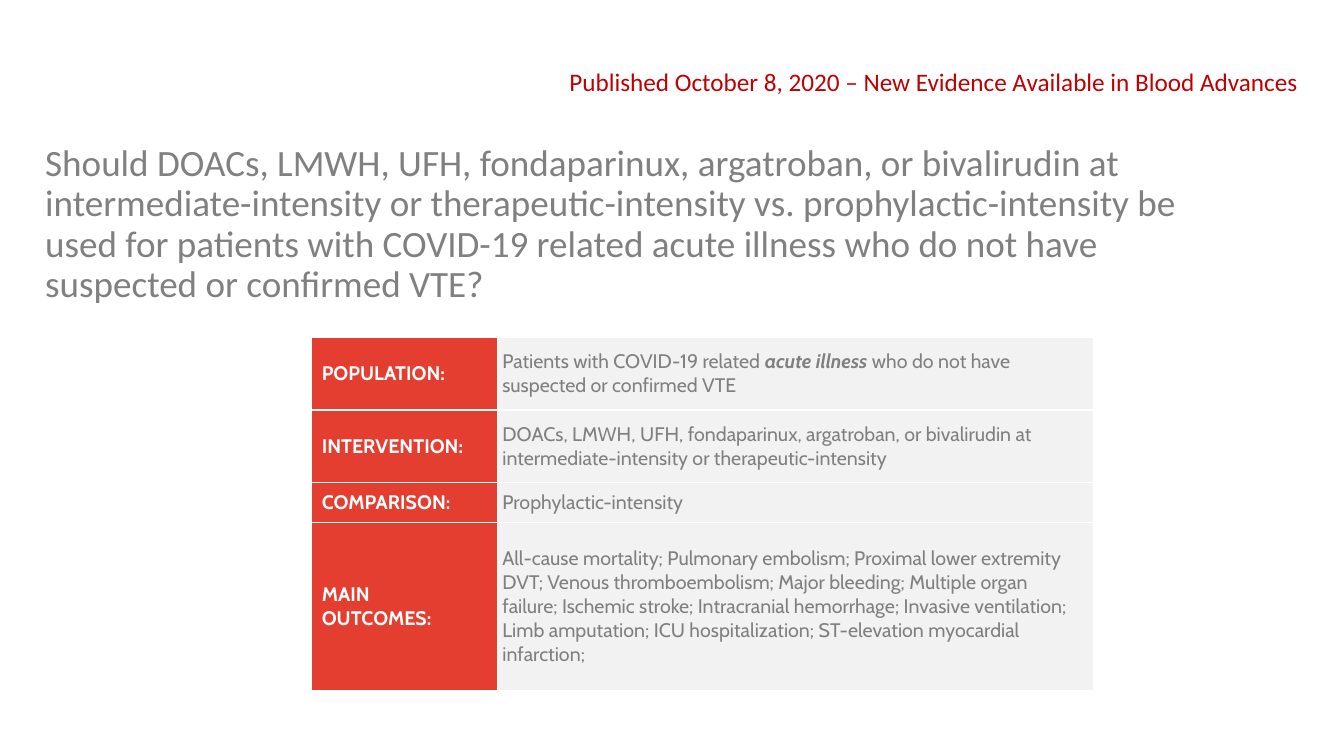
from lxml.etree import SubElement
from pptx import Presentation
from pptx.dml.color import RGBColor
from pptx.enum.text import MSO_ANCHOR as Anchor, PP_ALIGN as Align
from pptx.oxml.ns import qn
from pptx.util import Cm, Pt

RED = RGBColor(0xE4, 0x3E, 0x31)
DARK_RED = RGBColor(0xC0, 0x00, 0x00)
GREY = RGBColor(0x80, 0x80, 0x80)
PALE_GREY = RGBColor(0xF2, 0xF2, 0xF2)
WHITE = RGBColor(0xFF, 0xFF, 0xFF)

TITLE = "Published October 8, 2020 – New Evidence Available in Blood Advances"
QUESTION = (
    "Should DOACs, LMWH, UFH, fondaparinux, argatroban, or bivalirudin at "
    "intermediate-intensity or therapeutic-intensity vs. prophylactic-intensity be "
    "used for patients with COVID-19 related acute illness who do not have "
    "suspected or confirmed VTE?"
)
# Label, row height in cm, then the pieces of the description; every second piece is stressed.
PICO_ROWS = [
    ("POPULATION:", 1.82, ["Patients with COVID-19 related ", "acute illness",
                           " who do not have suspected or confirmed VTE"]),
    ("INTERVENTION:", 1.82, ["DOACs, LMWH, UFH, fondaparinux, argatroban, or bivalirudin at "
                             "intermediate-intensity or therapeutic-intensity"]),
    ("COMPARISON:", 1.01, ["Prophylactic-intensity"]),
    ("MAIN OUTCOMES:", 4.24, [
        "All-cause mortality; Pulmonary embolism; Proximal lower extremity DVT; "
        "Venous thromboembolism; Major bleeding; Multiple organ failure; Ischemic stroke; "
        "Intracranial hemorrhage; Invasive ventilation; Limb amputation; "
        "ICU hospitalization; ST-elevation myocardial infarction;"]),
]
COLUMN_WIDTHS = (Cm(4.67), Cm(15.04))


def add_text(paragraph, text, *, size, color, font="Calibri", bold=False, italic=False):
    run = paragraph.add_run()
    run.text = text
    run.font.name = font
    run.font.size = Pt(size)
    run.font.color.rgb = color
    run.font.bold = bold
    run.font.italic = italic


def prepare_frame(frame, top=0):
    """Make the frame wrap, with no margins except at the top."""
    frame.word_wrap = True
    frame.margin_left = frame.margin_right = frame.margin_bottom = 0
    frame.margin_top = top
    paragraph = frame.paragraphs[0]
    paragraph.alignment = Align.LEFT
    return paragraph


def add_title(slide):
    title = slide.shapes.title
    title.left, title.top, title.width, title.height = Cm(14.35), Cm(1.63), Cm(18.7), Cm(0.85)
    paragraph = prepare_frame(title.text_frame)
    title.text_frame.vertical_anchor = Anchor.MIDDLE
    add_text(paragraph, TITLE, size=18, color=DARK_RED)


def add_question(slide):
    question = slide.shapes.add_textbox(Cm(1.14), Cm(3.5), Cm(28.7), Cm(4.24))
    paragraph = prepare_frame(question.text_frame, top=Cm(0.15))
    paragraph.line_spacing = 0.9
    add_text(paragraph, QUESTION, size=26.5, color=GREY)


def add_borders(cell):
    properties = cell._tc.get_or_add_tcPr()
    for index, side in enumerate(("lnL", "lnR", "lnT", "lnB")):
        line = properties.makeelement(qn(f"a:{side}"), {"w": str(Pt(1))})
        fill = SubElement(line, qn("a:solidFill"))
        SubElement(fill, qn("a:srgbClr"), val=str(WHITE))
        properties.insert(index, line)


def fill_cell(cell, pieces, *, fill, color, left, right, bold=False):
    cell.fill.solid()
    cell.fill.fore_color.rgb = fill
    add_borders(cell)
    cell.vertical_anchor = Anchor.MIDDLE
    cell.margin_left, cell.margin_right = left, right
    cell.margin_top = cell.margin_bottom = 0
    paragraph = cell.text_frame.paragraphs[0]
    for index, piece in enumerate(pieces):
        stressed = index % 2 == 1
        add_text(paragraph, piece, size=14, color=color, font="Cabin",
                 bold=bold or stressed, italic=stressed)


def add_pico_table(slide):
    height = Cm(sum(row_height for _, row_height, _ in PICO_ROWS))
    pico = slide.shapes.add_table(len(PICO_ROWS), len(COLUMN_WIDTHS), Cm(7.86), Cm(8.51),
                                  sum(COLUMN_WIDTHS), height).table
    for column, width in zip(pico.columns, COLUMN_WIDTHS):
        column.width = width
    for index, (label, row_height, description) in enumerate(PICO_ROWS):
        pico.rows[index].height = Cm(row_height)
        fill_cell(pico.cell(index, 0), [label], fill=RED, color=WHITE,
                  left=Cm(0.25), right=Cm(0.75), bold=True)
        fill_cell(pico.cell(index, 1), description, fill=PALE_GREY, color=GREY,
                  left=Cm(0.13), right=Cm(0.4))


def main():
    deck = Presentation()
    deck.slide_width, deck.slide_height = Cm(33.87), Cm(19.05)
    slide = deck.slides.add_slide(deck.slide_layouts[5])
    add_title(slide)
    add_question(slide)
    add_pico_table(slide)
    deck.save("out.pptx")


if __name__ == "__main__":
    main()
